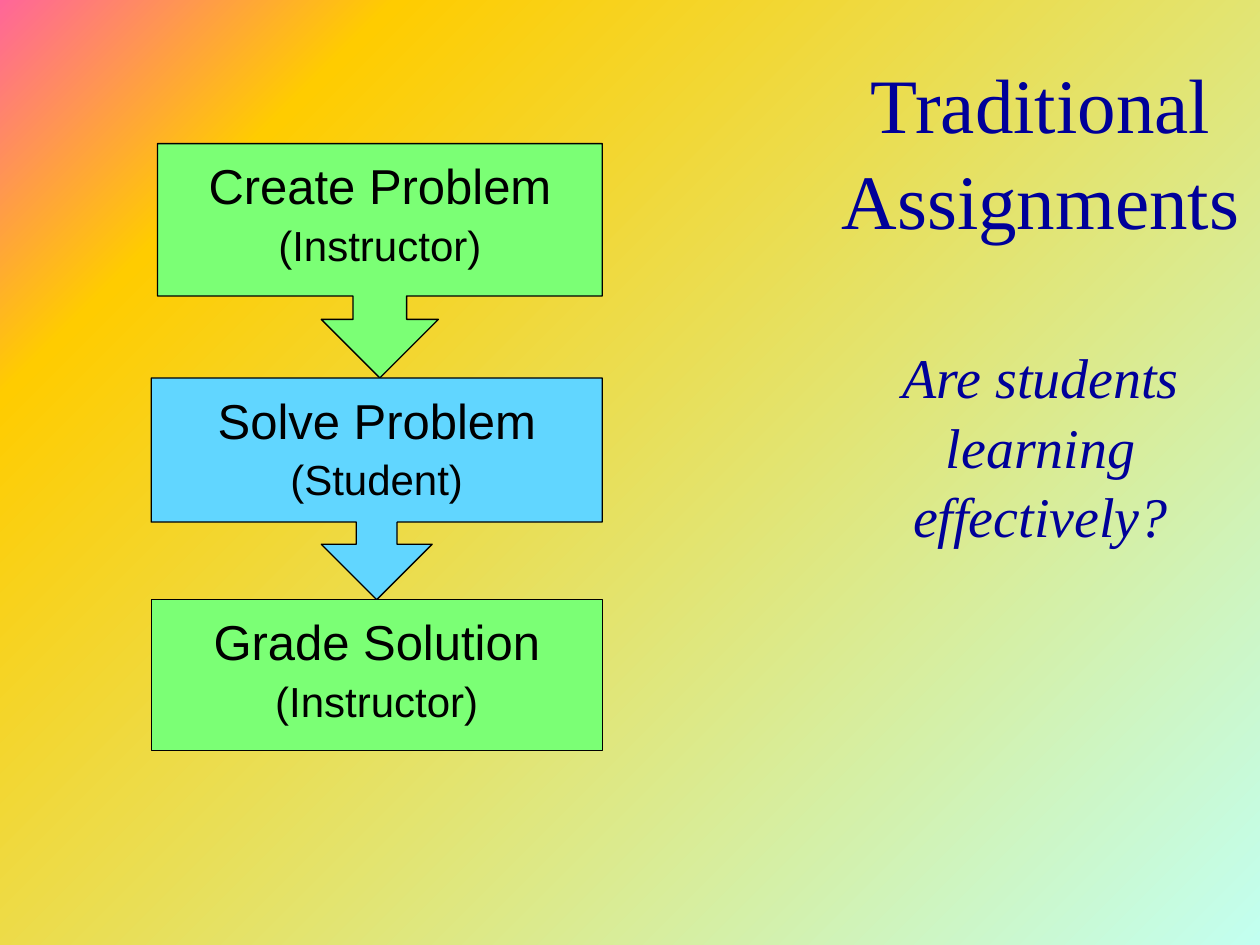
"""Build the Traditional Assignments slide: a three-step flow beside a title and question."""
from dataclasses import dataclass

from lxml import etree
from pptx import Presentation
from pptx.dml.color import RGBColor
from pptx.enum.shapes import MSO_SHAPE as Shape
from pptx.enum.text import MSO_ANCHOR as Anchor, MSO_AUTO_SIZE as AutoSize, PP_ALIGN as Align
from pptx.oxml import parse_xml
from pptx.oxml.ns import nsdecls, qn
from pptx.util import Inches, Pt


@dataclass(frozen=True)
class Theme:
    instructor: str = "7BFF75"
    student: str = "61D6FF"
    black: str = "000000"
    navy: str = "000099"
    gradient: tuple = ((0, "C2FFF0"), (82, "FFCC00"), (100, "FF6699"))
    body_font: str = "Arial"
    title_font: str = "Times New Roman"
    title_size: int = 44
    question_size: int = 32
    step_size: int = 28
    role_size: int = 24


theme = Theme()


def format_paragraph(paragraph, text, font_name, size, color, line_spacing):
    paragraph.text = text
    paragraph.alignment = Align.CENTER
    paragraph.line_spacing = line_spacing
    paragraph.font.name = font_name
    paragraph.font.size = Pt(size)
    paragraph.font.color.rgb = RGBColor.from_string(color)


presentation = Presentation()
presentation.slide_width = Inches(10)
presentation.slide_height = Inches(7.5)
slide = presentation.slides.add_slide(presentation.slide_layouts[5])

slide.background.fill.solid()
background = slide.background.fill._xPr
background.remove(background.find(qn("a:solidFill")))
gradient = parse_xml(
    f'<a:gradFill {nsdecls("a")} rotWithShape="0"><a:gsLst/><a:path path="circle">'
    '<a:fillToRect l="100000" t="100000"/></a:path></a:gradFill>'
)
for position, color in theme.gradient:
    stop = etree.SubElement(gradient[0], qn("a:gs"), pos=str(position * 1000))
    etree.SubElement(stop, qn("a:srgbClr"), val=color)
background.insert(0, gradient)

steps = [
    ("Create Problem", "(Instructor)", theme.instructor, 1.25, 1.14, 3.53, 1.86, 0.229),
    ("Solve Problem", "(Student)", theme.student, 1.2, 3, 3.58, 1.76, 0.184),
    ("Grade Solution", "(Instructor)", theme.instructor, 1.2, 4.76, 3.58, 1.2, None),
]
for step, role, fill, left, top, width, height, stem in steps:
    kind = Shape.DOWN_ARROW_CALLOUT if stem else Shape.RECTANGLE
    shape = slide.shapes.add_shape(kind, Inches(left), Inches(top), Inches(width), Inches(height))
    if stem:
        for index, value in enumerate((stem, 0.25, 0.25, 0.65)):
            shape.adjustments[index] = value
    shape.shadow.inherit = False
    shape.fill.solid()
    shape.fill.fore_color.rgb = RGBColor.from_string(fill)
    shape.line.color.rgb = RGBColor.from_string(theme.black)
    shape.line.width = Pt(0.75)
    frame = shape.text_frame
    frame.vertical_anchor = Anchor.TOP
    format_paragraph(frame.paragraphs[0], step, theme.body_font, theme.step_size, theme.black, 1.1)
    format_paragraph(frame.add_paragraph(), role, theme.body_font, theme.role_size, theme.black, 1.1)

title = slide.shapes.title
title.left, title.top = Inches(6.52), Inches(0.37)
title.width, title.height = Inches(3.48), Inches(3.94)
frame = title.text_frame
frame.word_wrap = True
frame.auto_size = AutoSize.NONE
frame.vertical_anchor = Anchor.TOP
format_paragraph(frame.paragraphs[0], "Traditional Assignments", theme.title_font,
                 theme.title_size, theme.navy, 1.04)
question = frame.add_paragraph()
format_paragraph(question, "Are students learning effectively?", theme.title_font,
                 theme.question_size, theme.navy, 1.04)
question.font.italic = True
question.space_before = Pt(54)

presentation.save("out.pptx")
